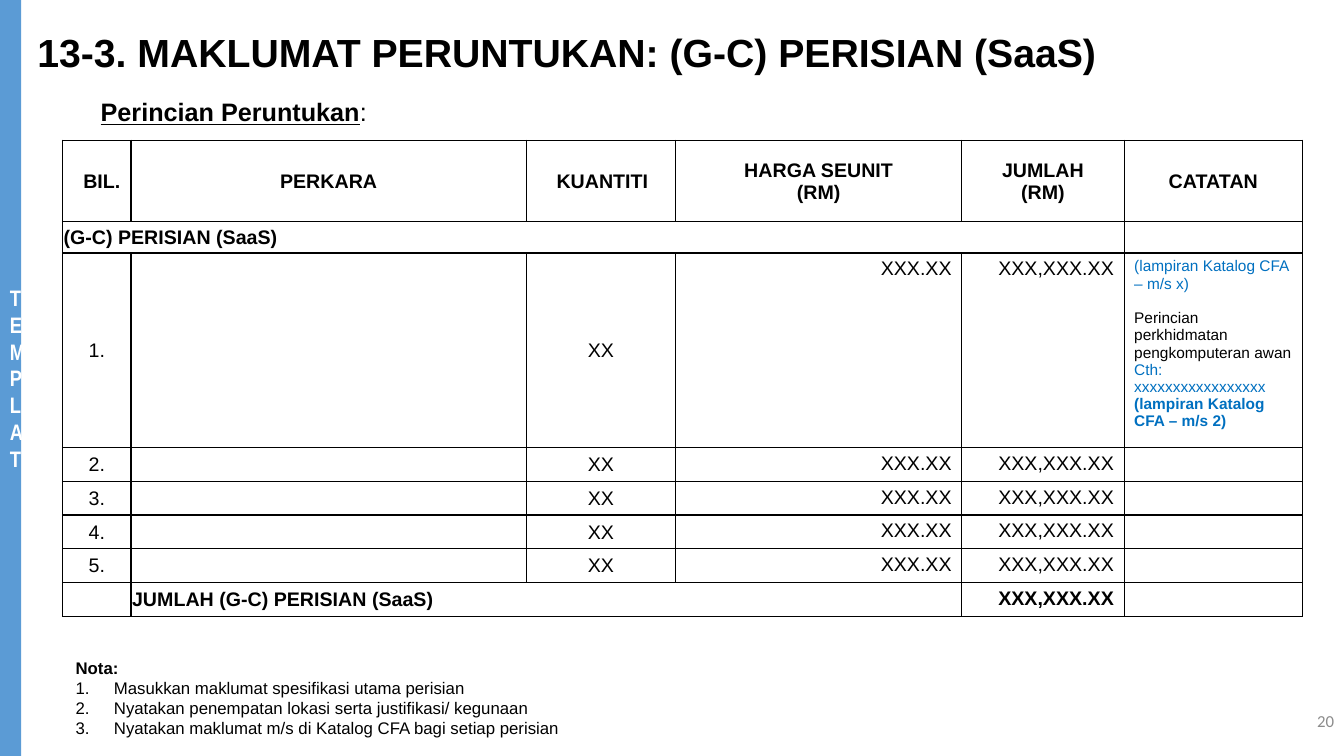
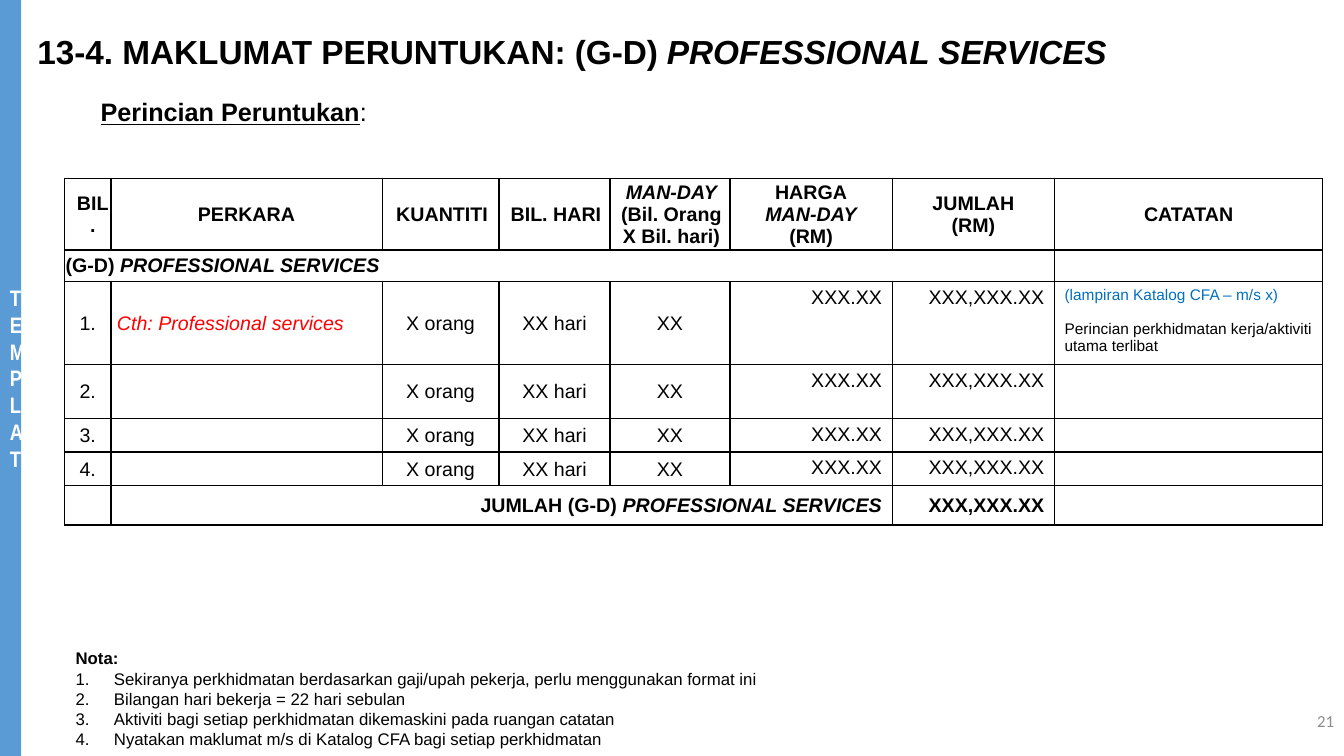
from lxml.etree import SubElement
from pptx import Presentation
from pptx.dml.color import RGBColor
from pptx.enum.shapes import MSO_SHAPE
from pptx.enum.text import MSO_ANCHOR, MSO_AUTO_SIZE, PP_ALIGN
from pptx.oxml.ns import qn
from pptx.util import Inches, Pt

COLORS = {"band": "5B9BD5", "text": "000000", "note": "0070C0",
          "example": "FF0000", "number": "8C8C8C", "light": "FFFFFF"}
BOLD = {"bold": True}
ITALIC = {"italic": True}
BLUE = {"color": "note"}
BODY = {"size": 14, "name": "Arial", "color": "text"}
SMALL = {**BODY, "size": 11}
LEFT, CENTER, RIGHT = PP_ALIGN.LEFT, PP_ALIGN.CENTER, PP_ALIGN.RIGHT
TIGHT = (0.01, 0.01, 0.01, 0)
ROOMY = (0.1, 0.05, 0.1, 0.05)
REMARK_GAP = 12.5

SUBTITLE = [[("Perincian Peruntukan", {"bold": True, "underline": True}), (":", {})]]
SERVICES = ("PROFESSIONAL SERVICES", ITALIC)

PAGES = [
    {
        "number": "20",
        "title": ["13-3. MAKLUMAT PERUNTUKAN: (G-C) PERISIAN (SaaS)"],
        "title_size": 28, "title_spacing": 0.9,
        "table_at": (0.62, 1.39),
        "columns": [
            (["BIL."], 0.68, 0.1), (["PERKARA"], 3.92, 0), (["KUANTITI"], 1.48, 0.03),
            (["HARGA SEUNIT", "(RM)"], 2.84, 0), (["JUMLAH", "(RM)"], 1.61, 0),
            (["CATATAN"], 1.77, 0)],
        "row_heights": [0.81, 0.31, 1.93] + [0.335] * 5,
        "section": ["(G-C) PERISIAN (SaaS)"],
        "example": [],
        "quantities": ["XX"],
        "item_count": 5,
        "remarks": [
            [("(lampiran Katalog CFA – m/s x)", BLUE)],
            "Perincian perkhidmatan pengkomputeran awan",
            [("Cth:", BLUE)],
            [("xxxxxxxxxxxxxxxxx", BLUE)],
            [("(lampiran Katalog CFA – m/s 2)", {**BLUE, **BOLD})]],
        "total": ["JUMLAH (G-C) PERISIAN (SaaS)"],
        "total_align": LEFT, "total_margins": TIGHT, "sum_anchor": MSO_ANCHOR.TOP,
        "notes_top": 6.47,
        "notes": [
            "Masukkan maklumat spesifikasi utama perisian",
            "Nyatakan penempatan lokasi serta justifikasi/ kegunaan",
            "Nyatakan maklumat m/s di Katalog CFA bagi setiap perisian"],
    },
    {
        "number": "21",
        "title": [[("13-4. MAKLUMAT PERUNTUKAN: (G-D) ", {}), SERVICES]],
        "title_size": 23.8, "title_spacing": 0.8,
        "table_at": (0.64, 1.77),
        "columns": [
            (["BIL."], 0.46, 0.1), (["PERKARA"], 2.69, 0), (["KUANTITI"], 1.16, 0.03),
            (["BIL. HARI"], 1.1, 0.03),
            ([[("MAN-DAY", ITALIC)], "(Bil. Orang X Bil. hari)"], 1.19, 0.03),
            (["HARGA", [("MAN-DAY", ITALIC)], "(RM)"], 1.61, 0),
            (["JUMLAH", "(RM)"], 1.61, 0), (["CATATAN"], 2.66, 0)],
        "row_heights": [0.71, 0.31, 0.83, 0.53, 0.335, 0.335, 0.39],
        "section": [[("(G-D) ", {}), SERVICES]],
        "example": [[("Cth: Professional services", {"color": "example", **ITALIC})]],
        "quantities": ["X orang", "XX hari", "XX"],
        "item_count": 4,
        "remarks": [
            [("(lampiran Katalog CFA – m/s x)", BLUE)],
            "Perincian perkhidmatan kerja/aktiviti utama terlibat"],
        "total": [[("JUMLAH (G-D) ", {}), SERVICES]],
        "total_align": RIGHT, "total_margins": ROOMY, "sum_anchor": MSO_ANCHOR.MIDDLE,
        "notes_top": 6.38,
        "notes": [
            "Sekiranya perkhidmatan berdasarkan gaji/upah pekerja, perlu menggunakan format ini",
            "Bilangan hari bekerja = 22 hari sebulan",
            "Aktiviti bagi setiap perkhidmatan dikemaskini pada ruangan catatan",
            "Nyatakan maklumat m/s di Katalog CFA bagi setiap perkhidmatan"],
    },
]


def format_font(font, style):
    for key, value in style.items():
        if key == "color":
            font.color.rgb = RGBColor.from_string(COLORS[value])
        else:
            setattr(font, key, Pt(value) if key == "size" else value)


def write(frame, paragraphs, style, align=LEFT, spacing=1.0):
    for index, content in enumerate(paragraphs):
        paragraph = frame.add_paragraph() if index else frame.paragraphs[0]
        layout = {"alignment": align, "line_spacing": spacing,
                  "space_before": Pt(0), "space_after": Pt(0)}
        for key, value in layout.items():
            setattr(paragraph, key, value)
        for text, extra in [(content, {})] if isinstance(content, str) else content:
            run = paragraph.add_run()
            run.text = text
            format_font(run.font, {**style, **extra})


def indent(paragraph, margin, first=0.0):
    properties = paragraph._p.get_or_add_pPr()
    properties.set("marL", str(Inches(margin)))
    properties.set("indent", str(Inches(first)))
    return properties


def place(box, left, top, width, height, anchor=MSO_ANCHOR.TOP):
    for key, value in zip(("left", "top", "width", "height"), (left, top, width, height)):
        setattr(box, key, Inches(value))
    frame = box.text_frame
    frame.word_wrap = True
    frame.auto_size = MSO_AUTO_SIZE.NONE
    frame.vertical_anchor = anchor
    return frame


def add_band(slide, layout):
    band = slide.shapes.add_shape(MSO_SHAPE.RECTANGLE, 0, 0, 0, 0)
    frame = place(band, 0, 0, 0.21, 7.5, MSO_ANCHOR.MIDDLE)
    band.shadow.inherit = False
    band.fill.solid()
    band.fill.fore_color.rgb = RGBColor.from_string(COLORS["band"])
    band.line.fill.background()
    write(frame, ["TEMPLAT"], {"size": 16, "name": "Arial Narrow", "color": "light", **BOLD}, CENTER)
    layout.shapes.element.insert(2, band.element)


def prepare_cell(cell):
    properties = cell._tc.get_or_add_tcPr()
    for side in ("lnL", "lnR", "lnT", "lnB"):
        border = SubElement(properties, qn(f"a:{side}"), w=str(Pt(1)))
        SubElement(SubElement(border, qn("a:solidFill")), qn("a:srgbClr"), val=COLORS["text"])
    cell.fill.background()


def write_cell(cell, paragraphs, style=BODY, align=CENTER, margins=TIGHT, anchor=MSO_ANCHOR.MIDDLE):
    for side, margin in zip(("left", "top", "right", "bottom"), margins):
        setattr(cell, f"margin_{side}", Inches(margin))
    cell.vertical_anchor = anchor
    write(cell.text_frame, paragraphs, style, align)
    if not paragraphs:
        SubElement(cell.text_frame.paragraphs[0]._p, qn("a:endParaRPr"), sz=str(style["size"] * 100))


def add_budget(slide, page):
    columns, heights = page["columns"], page["row_heights"]
    last_row, remark = len(heights) - 1, len(columns) - 1
    amount, price = remark - 1, remark - 2
    left, top = page["table_at"]
    table = slide.shapes.add_table(
        len(heights), len(columns), Inches(left), Inches(top),
        Inches(sum(width for _, width, _ in columns)), Inches(sum(heights))).table
    table.first_row = table.horz_banding = False
    for row, height in zip(table.rows, heights):
        row.height = Inches(height)
    for cell in table.iter_cells():
        prepare_cell(cell)

    strong = {**BODY, **BOLD}
    for index, (heading, width, offset) in enumerate(columns):
        table.columns[index].width = Inches(width)
        write_cell(table.cell(0, index), heading, strong)
        for paragraph in table.cell(0, index).text_frame.paragraphs:
            indent(paragraph, offset)

    table.cell(1, 0).merge(table.cell(1, amount))
    write_cell(table.cell(1, 0), page["section"], strong, LEFT)
    write_cell(table.cell(1, remark), [])

    for item in range(1, page["item_count"] + 1):
        row = item + 1
        write_cell(table.cell(row, 0), [f"{item}."])
        write_cell(table.cell(row, 1), page["example"] if item == 1 else [],
                   align=LEFT, margins=(0.06, 0.01, 0.01, 0))
        for index, quantity in enumerate(page["quantities"], 2):
            write_cell(table.cell(row, index), [quantity])
        for index, value in ((price, "XXX.XX"), (amount, "XXX,XXX.XX")):
            write_cell(table.cell(row, index), [value], BODY, RIGHT, ROOMY, MSO_ANCHOR.TOP)
        write_cell(table.cell(row, remark), page["remarks"] if item == 1 else [],
                   SMALL, LEFT, ROOMY, MSO_ANCHOR.TOP)
    table.cell(2, remark).text_frame.paragraphs[1].space_before = Pt(REMARK_GAP)

    table.cell(last_row, 1).merge(table.cell(last_row, price))
    write_cell(table.cell(last_row, 0), [])
    write_cell(table.cell(last_row, 1), page["total"], strong, page["total_align"], page["total_margins"])
    write_cell(table.cell(last_row, amount), ["XXX,XXX.XX"], strong, RIGHT, ROOMY, page["sum_anchor"])
    write_cell(table.cell(last_row, remark), [])


def add_notes_list(slide, page):
    height = 0.1 + 0.2 * (len(page["notes"]) + 1)
    frame = place(slide.placeholders[1], 0.65, page["notes_top"], 12.68, height)
    write(frame, [[("Nota:", BOLD)], *page["notes"]], {**BODY, "size": 12, "bold": False})
    heading, *items = frame.paragraphs
    SubElement(indent(heading, 0), qn("a:buNone"))
    for item in items:
        properties = indent(item, 0.38, -0.38)
        SubElement(properties, qn("a:buFont"), typeface="Arial")
        SubElement(properties, qn("a:buAutoNum"), type="arabicPeriod")


def add_page(slide, page):
    title = place(slide.shapes.title, 0.27, 0.22, 11.5, 0.65, MSO_ANCHOR.MIDDLE)
    write(title, page["title"], {**BODY, **BOLD, "size": page["title_size"]},
          spacing=page["title_spacing"])
    subtitle = place(slide.shapes.add_textbox(0, 0, 0, 0), 0.9, 0.91, 8.35, 0.4)
    write(subtitle, SUBTITLE, {**BODY, "size": 18})
    add_budget(slide, page)
    add_notes_list(slide, page)
    number = place(slide.shapes.add_textbox(0, 0, 0, 0), 10.33, 6.95, 3, 0.4, MSO_ANCHOR.MIDDLE)
    write(number, [page["number"]], {"size": 12, "name": "Calibri", "color": "number"}, RIGHT)


def main():
    deck = Presentation()
    deck.slide_width, deck.slide_height = Inches(13.33), Inches(7.5)
    layout = deck.slide_layouts[1]
    slides = [deck.slides.add_slide(layout) for _ in PAGES]
    add_band(slides[0], layout)
    for slide, page in zip(slides, PAGES):
        add_page(slide, page)
    deck.save("out.pptx")


if __name__ == "__main__":
    main()
